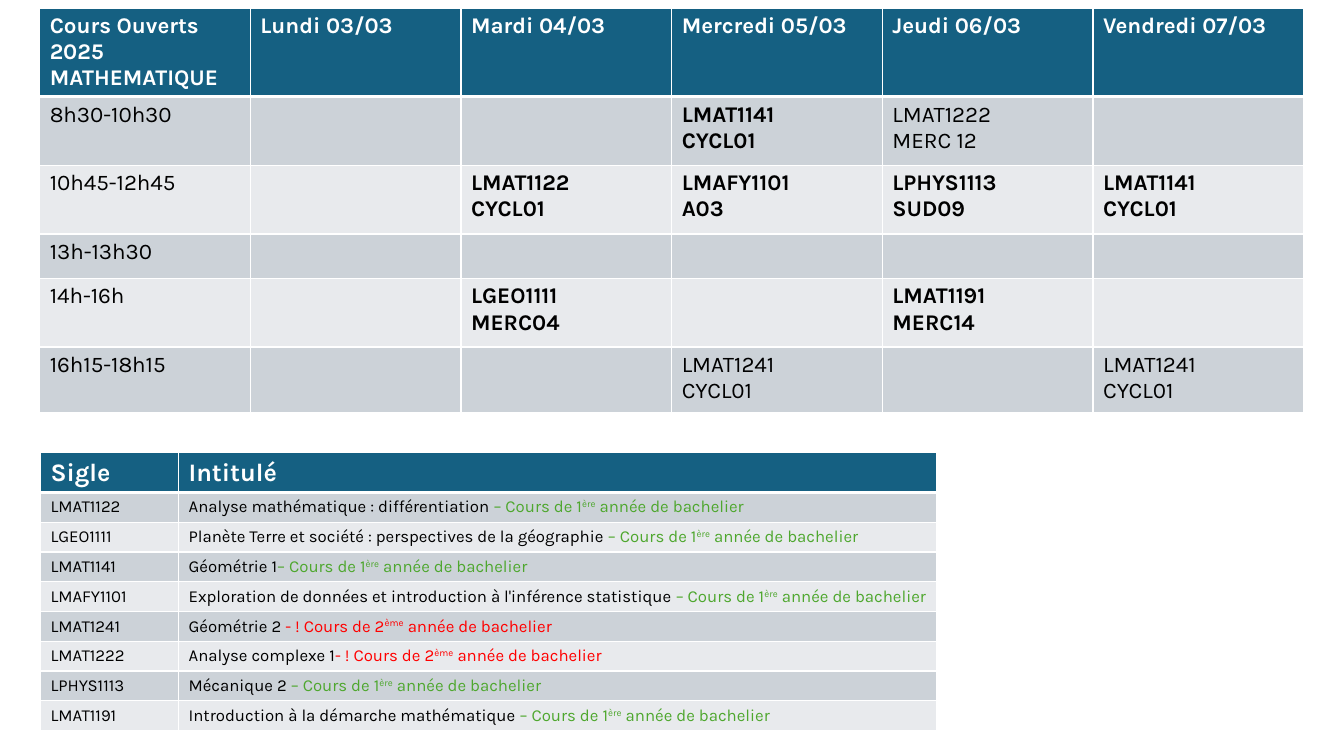
from lxml import etree
from pptx import Presentation
from pptx.dml.color import RGBColor
from pptx.oxml import ns
from pptx.util import Cm, Pt

FONT = "Karla"
COLORS = {"header": "156082", "odd": "CCD2D8", "even": "E8EAED", "line": "FFFFFF",
          "light": "FFFFFF", "dark": "000000", "first": "4EA72E", "second": "FF0000"}

TIMETABLE_HEADER = ["Cours Ouverts 2025\nMATHEMATIQUE", "Lundi 03/03", "Mardi 04/03",
                    "Mercredi 05/03", "Jeudi 06/03", "Vendredi 07/03"]
# Time slot, then course and room for each day
TIMETABLE = [
    ("8h30-10h30", "", "", "LMAT1141\nCYCL01", "LMAT1222\nMERC 12", ""),
    ("10h45-12h45", "", "LMAT1122\nCYCL01", "LMAFY1101\nA03", "LPHYS1113\nSUD09",
     "LMAT1141\nCYCL01"),
    ("13h-13h30", "", "", "", "", ""),
    ("14h-16h", "", "LGEO1111\nMERC04", "", "LMAT1191\nMERC14", ""),
    ("16h15-18h15", "", "", "LMAT1241\nCYCL01", "", "LMAT1241\nCYCL01"),
]
TIMETABLE_HEIGHTS = [2.03, 1.73, 1.73, 1.12, 1.73, 1.65]

COURSE_HEADER = ["Sigle", "Intitulé"]
COURSES = [
    ("LMAT1122", "Analyse mathématique : différentiation ", "first"),
    ("LGEO1111", "Planète Terre et société : perspectives de la géographie ", "first"),
    ("LMAT1141", "Géométrie 1", "first"),
    ("LMAFY1101", "Exploration de données et introduction à l'inférence statistique ", "first"),
    ("LMAT1241", "Géométrie 2 ", "second"),
    ("LMAT1222", "Analyse complexe 1", "second"),
    ("LPHYS1113", "Mécanique 2 ", "first"),
    ("LMAT1191", "Introduction à la démarche mathématique ", "first"),
]
YEAR_LABELS = {"first": ("– Cours de 1", "ère"), "second": ("- ! Cours de 2", "ème")}
YEAR_END = " année de bachelier"
SECOND_YEAR = {sigle for sigle, _, year in COURSES if year == "second"}


def add_run(p, content, size, color="dark", bold=False, raised=False):
    r = p.add_run()
    r.text = content
    r.font.name, r.font.size, r.font.bold = FONT, Pt(size), bold
    r.font.color.rgb = RGBColor.from_string(COLORS[color])
    if raised:
        r._r.get_or_add_rPr().set("baseline", "30000")


def add_borders(cell, top, bottom):
    tc_pr = cell._tc.get_or_add_tcPr()
    for i, (side, width) in enumerate([("L", 1), ("R", 1), ("T", top), ("B", bottom)]):
        ln = etree.Element(ns.qn(f"a:ln{side}"), w=str(Pt(width)))
        fill = etree.SubElement(ln, ns.qn("a:solidFill"))
        etree.SubElement(fill, ns.qn("a:srgbClr"), val=COLORS["line"])
        tc_pr.insert(i, ln)


def add_grid(slide, left, top, widths, heights):
    """Add a table with a dark header, striped rows and white borders."""
    frame = slide.shapes.add_table(len(heights), len(widths), Cm(left), Cm(top),
                                   Cm(sum(widths)), Cm(sum(heights)))
    table = frame.table
    for column, width in zip(table.columns, widths):
        column.width = Cm(width)
    for i, (row, height) in enumerate(zip(table.rows, heights)):
        row.height = Cm(height)
        shade = "header" if i == 0 else "odd" if i % 2 else "even"
        for cell in row.cells:
            cell.fill.solid()
            cell.fill.fore_color.rgb = RGBColor.from_string(COLORS[shade])
            add_borders(cell, top=3 if i == 1 else 1, bottom=3 if i == 0 else 1)
    return table


def fill_header(table, labels, size):
    for cell, label in zip(table.rows[0].cells, labels):
        tf = cell.text_frame
        for i, line in enumerate(label.split("\n")):
            p = tf.add_paragraph() if i else tf.paragraphs[0]
            add_run(p, line, size, "light", bold=True)


def add_timetable(slide):
    table = add_grid(slide, 1, 0.2, [5.31] * len(TIMETABLE_HEADER), TIMETABLE_HEIGHTS)
    fill_header(table, TIMETABLE_HEADER, 16)
    for i, entries in enumerate(TIMETABLE, 1):
        for j, entry in enumerate(entries):
            if not entry:
                continue
            p = table.cell(i, j).text_frame.paragraphs[0]
            lines = entry.split("\n")
            bold = j > 0 and lines[0] not in SECOND_YEAR
            for k, line in enumerate(lines):
                if k:
                    p.add_line_break()
                add_run(p, line, 16, bold=bold)


def add_course_list(slide):
    table = add_grid(slide, 1.02, 11.41, [3.48, 19.1], [0.69] * (len(COURSES) + 1))
    fill_header(table, COURSE_HEADER, 18)
    for i, (sigle, title, year) in enumerate(COURSES, 1):
        add_run(table.cell(i, 0).text_frame.paragraphs[0], sigle, 12)
        p = table.cell(i, 1).text_frame.paragraphs[0]
        label, suffix = YEAR_LABELS[year]
        add_run(p, title, 12)
        add_run(p, label, 12, year)
        add_run(p, suffix, 12, year, raised=True)
        add_run(p, YEAR_END, 12, year)


def main():
    prs = Presentation()
    prs.slide_width, prs.slide_height = Cm(33.87), Cm(19.05)
    slide = prs.slides.add_slide(prs.slide_layouts[6])
    add_timetable(slide)
    add_course_list(slide)
    prs.save("out.pptx")


if __name__ == "__main__":
    main()
